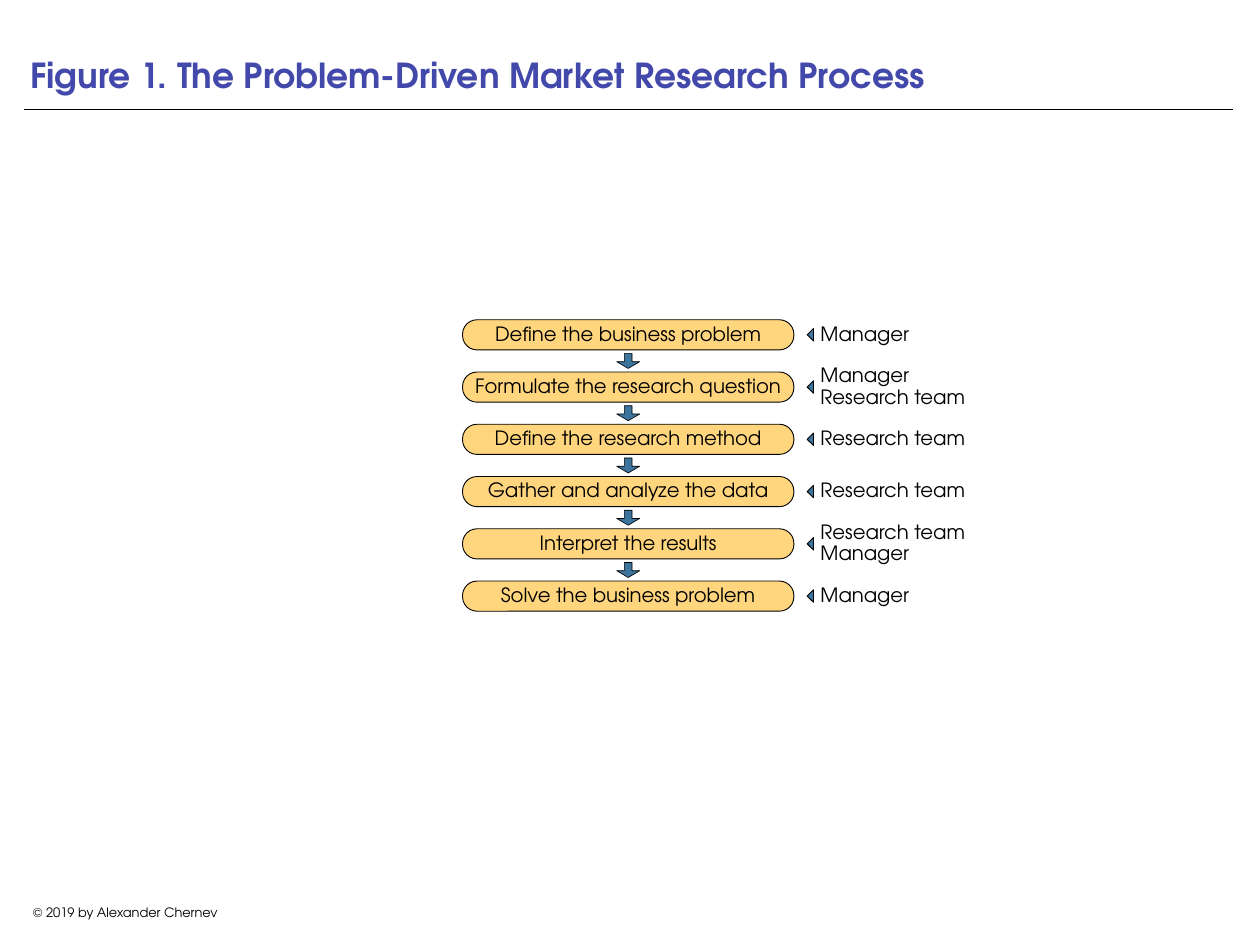
"""Build the slide on the problem-driven market research process."""
import pptx
import pptx.dml.color
import pptx.enum.shapes
import pptx.enum.text
import pptx.oxml
import pptx.oxml.ns
import pptx.util

SLIDE_WIDTH = pptx.util.Inches(14.22)
SLIDE_HEIGHT = pptx.util.Inches(10.67)
FONT = "TeX Gyre Adventor"
BLACK, INDIGO, AMBER, STEEL = "000000", "4349AA", "FFD67E", "3D749D"
SHAPES = pptx.enum.shapes.MSO_SHAPE
ALIGN = pptx.enum.text.PP_ALIGN
ANCHOR = pptx.enum.text.MSO_ANCHOR

FIRST_ROW, ROW = 35.43, 5.53
STEP_LEFT, STEP_WIDTH, STEP_HEIGHT = 36.71, 26.3, 3.19
ARROW_WIDTH, ARROW_HEIGHT = 1.83, 1.59
POINTER_TIP, POINTER_BACK, POINTER_HALF = 64.06, 64.56, 0.66
ROLE_LEFT, ROLE_WIDTH, ROLE_PADDING, ROLE_LINE = 65.12, 11.6, 1.6, 2.06

STAGES = [
    ("Define the business problem", ["Manager"]),
    ("Formulate the research question", ["Manager", "Research team"]),
    ("Define the research method", ["Research team"]),
    ("Gather and analyze the data", ["Research team"]),
    ("Interpret the results", ["Research team", "Manager"]),
    ("Solve the business problem", ["Manager"]),
]


def across(percent):
    """Return a share of the slide's width."""
    return round(SLIDE_WIDTH * percent / 100)


def down(percent):
    """Return a share of the slide's height."""
    return round(SLIDE_HEIGHT * percent / 100)


def area(left, top, width, height):
    """Return a rectangle given in percent of the slide."""
    return across(left), down(top), across(width), down(height)


def colour(value):
    """Return the colour for a hex string."""
    return pptx.dml.color.RGBColor.from_string(value)


def paint(shape, fill, line_width):
    """Give a shape a plain fill and a black outline."""
    shape.shadow.inherit = False
    shape.fill.solid()
    shape.fill.fore_color.rgb = colour(fill)
    shape.line.color.rgb = colour(BLACK)
    shape.line.width = pptx.util.Pt(line_width)


def write(frame, lines, size, ink=BLACK, bold=False, align=ALIGN.LEFT, spacing=None):
    """Write one paragraph per line into a text frame."""
    for index, line in enumerate(lines):
        paragraph = frame.add_paragraph() if index else frame.paragraphs[0]
        paragraph.alignment = align
        paragraph.line_spacing = spacing
        run = paragraph.add_run()
        run.text = line
        run.font.name = FONT
        run.font.size = pptx.util.Pt(size)
        run.font.bold = bold
        run.font.color.rgb = colour(ink)


def set_margins(frame, inches):
    """Set the same margin on all sides of a text frame."""
    margin = pptx.util.Inches(inches)
    frame.margin_left = frame.margin_right = margin
    frame.margin_top = frame.margin_bottom = margin


def add_title(slide, text):
    """Place the title and the rule below it."""
    title = slide.shapes.title
    title.left, title.top, title.width, title.height = area(1.9, 0, 97.33, 10.78)
    frame = title.text_frame
    frame.word_wrap = True
    frame.auto_size = pptx.enum.text.MSO_AUTO_SIZE.NONE
    frame.vertical_anchor = ANCHOR.BOTTOM
    set_margins(frame, 0.07)
    write(frame, [text], 28, INDIGO, bold=True)
    rule = slide.shapes.add_connector(
        pptx.enum.shapes.MSO_CONNECTOR.STRAIGHT,
        across(1.9), down(11.62), across(97.89), down(11.62))
    rule.line.color.rgb = colour(BLACK)
    rule.line.width = pptx.util.Pt(0.5)
    properties = rule._element.spPr
    properties.append(pptx.oxml.parse_xml(
        f"<a:effectLst {pptx.oxml.ns.nsdecls('a')}/>"))


def add_step(slide, middle, text):
    """Draw a rounded step centred on a row."""
    step = slide.shapes.add_shape(
        SHAPES.ROUNDED_RECTANGLE,
        *area(STEP_LEFT, middle - STEP_HEIGHT / 2, STEP_WIDTH, STEP_HEIGHT))
    step.adjustments[0] = 0.48
    paint(step, AMBER, 0.75)
    frame = step.text_frame
    frame.word_wrap = True
    frame.vertical_anchor = ANCHOR.MIDDLE
    set_margins(frame, 0)
    write(frame, [text], 16, align=ALIGN.CENTER, spacing=0.9)


def add_arrow(slide, middle):
    """Draw the block arrow between two steps."""
    centre = STEP_LEFT + STEP_WIDTH / 2
    arrow = slide.shapes.add_shape(
        SHAPES.DOWN_ARROW,
        *area(centre - ARROW_WIDTH / 2, middle - ARROW_HEIGHT / 2,
              ARROW_WIDTH, ARROW_HEIGHT))
    arrow.adjustments[0] = 0.33
    arrow.adjustments[1] = 0.45
    paint(arrow, STEEL, 0.5)


def add_pointer(slide, middle):
    """Draw the small triangle that points at a step."""
    outline = slide.shapes.build_freeform(
        across(POINTER_BACK), down(middle - POINTER_HALF))
    outline.add_line_segments([
        (across(POINTER_TIP), down(middle)),
        (across(POINTER_BACK), down(middle + POINTER_HALF)),
    ])
    paint(outline.convert_to_shape(), STEEL, 0.75)


def add_roles(slide, middle, roles):
    """Write who is in charge of a step."""
    height = ROLE_PADDING + ROLE_LINE * len(roles)
    label = slide.shapes.add_textbox(
        *area(ROLE_LEFT, middle - height / 2, ROLE_WIDTH, height))
    frame = label.text_frame
    frame.word_wrap = True
    frame.vertical_anchor = ANCHOR.MIDDLE
    set_margins(frame, 0)
    write(frame, roles, 16, spacing=0.9)


def add_copyright(slide, text):
    """Write the copyright line at the foot of the slide."""
    notice = slide.shapes.add_textbox(*area(1.9, 95.22, 16.1, 2.62))
    notice.text_frame.word_wrap = False
    write(notice.text_frame, [text], 10.5, align=ALIGN.CENTER)


def main():
    """Build and save the slide."""
    deck = pptx.Presentation()
    deck.slide_width, deck.slide_height = SLIDE_WIDTH, SLIDE_HEIGHT
    slide = deck.slides.add_slide(deck.slide_layouts.get_by_name("Title Only"))
    add_title(slide, "Figure 1. The Problem-Driven Market Research Process")
    for row, (step, roles) in enumerate(STAGES):
        middle = FIRST_ROW + row * ROW
        if row:
            add_arrow(slide, middle - ROW / 2)
        add_step(slide, middle, step)
        add_pointer(slide, middle)
        add_roles(slide, middle, roles)
    add_copyright(slide, "© 2019 by Alexander Chernev")
    deck.save("out.pptx")


if __name__ == "__main__":
    main()
